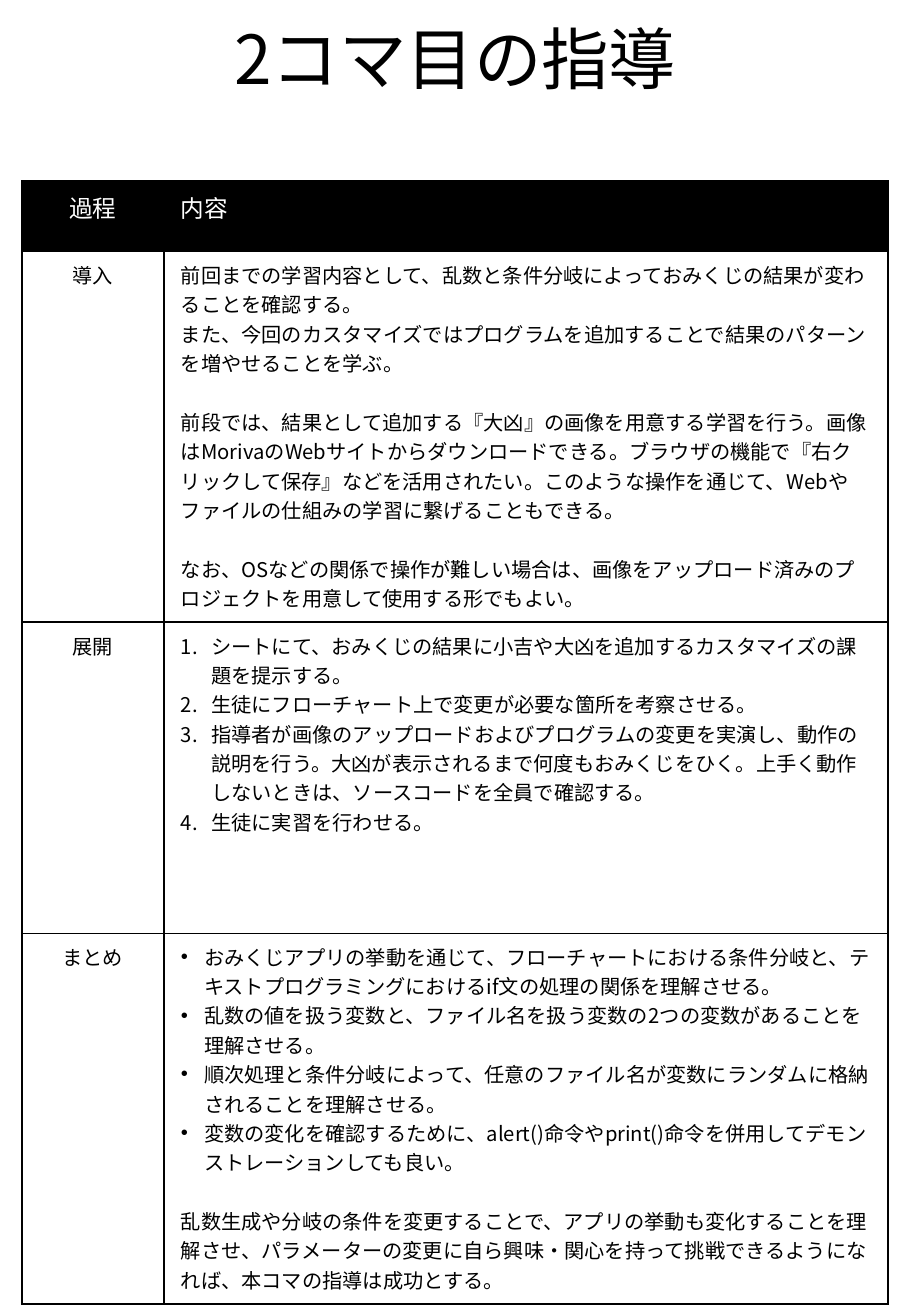
from dataclasses import dataclass
from enum import Enum

from lxml import etree
from pptx import Presentation
from pptx.dml.color import RGBColor
from pptx.enum.text import MSO_ANCHOR, MSO_AUTO_SIZE, PP_ALIGN
from pptx.oxml.ns import qn
from pptx.util import Inches, Pt

CENTER, LEFT = PP_ALIGN.CENTER, PP_ALIGN.LEFT
TOP, BOTTOM = MSO_ANCHOR.TOP, MSO_ANCHOR.BOTTOM
NO_AUTOFIT = MSO_AUTO_SIZE.NONE

BLACK = RGBColor(0x00, 0x00, 0x00)
WHITE = RGBColor(0xFF, 0xFF, 0xFF)
FONT = "Noto Sans CJK JP"
TITLE_SIZE, HEADER_SIZE, BODY_SIZE = 40, 14, 12
SECTION_GAP = Pt(17.4)
BORDER_WIDTH = Pt(1)
COLUMN_WIDTHS = (1.17, 5.96)


class Marker(Enum):
    """List marker; the value is its hanging indent in inches."""
    NONE = 0
    NUMBER = 0.25
    BULLET = 0.19


@dataclass(frozen=True)
class Line:
    text: str
    marker: Marker = Marker.NONE
    gap_before: bool = False


@dataclass(frozen=True)
class Stage:
    name: str
    content: tuple[Line, ...]
    height: float
    size: int = BODY_SIZE
    color: RGBColor = BLACK
    fill: RGBColor = WHITE


STAGES = (
    Stage("過程", (Line("内容"),), 0.58, HEADER_SIZE, WHITE, BLACK),
    Stage("導入", (
        Line("前回までの学習内容として、乱数と条件分岐によっておみくじの結果が変わることを確認する。"),
        Line("また、今回のカスタマイズではプログラムを追加することで結果のパターンを増やせることを学ぶ。"),
        Line("前段では、結果として追加する『大凶』の画像を用意する学習を行う。画像はMorivaのWebサイトから"
             "ダウンロードできる。ブラウザの機能で『右クリックして保存』などを活用されたい。"
             "このような操作を通じて、Webやファイルの仕組みの学習に繋げることもできる。", gap_before=True),
        Line("なお、OSなどの関係で操作が難しい場合は、画像をアップロード済みのプロジェクトを用意して"
             "使用する形でもよい。", gap_before=True),
    ), 3.05),
    Stage("展開", (
        Line("シートにて、おみくじの結果に小吉や大凶を追加するカスタマイズの課題を提示する。", Marker.NUMBER),
        Line("生徒にフローチャート上で変更が必要な箇所を考察させる。", Marker.NUMBER),
        Line("指導者が画像のアップロードおよびプログラムの変更を実演し、動作の説明を行う。"
             "大凶が表示されるまで何度もおみくじをひく。上手く動作しないときは、"
             "ソースコードを全員で確認する。", Marker.NUMBER),
        Line("生徒に実習を行わせる。", Marker.NUMBER),
    ), 2.56),
    Stage("まとめ", (
        Line("おみくじアプリの挙動を通じて、フローチャートにおける条件分岐と、"
             "テキストプログラミングにおけるif文の処理の関係を理解させる。", Marker.BULLET),
        Line("乱数の値を扱う変数と、ファイル名を扱う変数の2つの変数があることを理解させる。", Marker.BULLET),
        Line("順次処理と条件分岐によって、任意のファイル名が変数にランダムに格納されることを理解させる。",
             Marker.BULLET),
        Line("変数の変化を確認するために、alert()命令やprint()命令を併用して"
             "デモンストレーションしても良い。", Marker.BULLET),
        Line("乱数生成や分岐の条件を変更することで、アプリの挙動も変化することを理解させ、"
             "パラメーターの変更に自ら興味・関心を持って挑戦できるようになれば、"
             "本コマの指導は成功とする。", gap_before=True),
    ), 3.05),
)


def set_font(paragraph, size: int, color: RGBColor) -> None:
    font = paragraph.font
    font.size, font.bold, font.name = Pt(size), False, FONT
    font.color.rgb = color
    defaults = paragraph._p.get_or_add_pPr().find(qn("a:defRPr"))
    etree.SubElement(defaults, qn("a:ea"), typeface=FONT)


def set_marker(paragraph, marker: Marker) -> None:
    if marker is Marker.NONE:
        return
    properties = paragraph._p.get_or_add_pPr()
    indent = Inches(marker.value)
    properties.set("marL", str(indent))
    properties.set("indent", str(-indent))
    if marker is Marker.NUMBER:
        etree.SubElement(properties, qn("a:buAutoNum"), type="arabicPeriod")
    else:
        etree.SubElement(properties, qn("a:buFont"), typeface="Arial")
        etree.SubElement(properties, qn("a:buChar"), char="•")


def set_borders(cell) -> None:
    properties = cell._tc.get_or_add_tcPr()
    for position, side in enumerate(("lnL", "lnR", "lnT", "lnB")):
        border = etree.Element(qn(f"a:{side}"), w=str(BORDER_WIDTH))
        solid = etree.SubElement(border, qn("a:solidFill"))
        etree.SubElement(solid, qn("a:srgbClr"), val=str(BLACK))
        properties.insert(position, border)


def fill_cell(cell, lines: tuple[Line, ...], stage: Stage, alignment: PP_ALIGN) -> None:
    cell.margin_left = cell.margin_right = Inches(0.14)
    cell.margin_top = cell.margin_bottom = Inches(0.07)
    cell.vertical_anchor = TOP
    cell.fill.solid()
    cell.fill.fore_color.rgb = stage.fill
    set_borders(cell)
    frame = cell.text_frame
    for index, line in enumerate(lines):
        paragraph = frame.add_paragraph() if index else frame.paragraphs[0]
        paragraph.text = line.text
        paragraph.alignment = alignment
        if line.gap_before:
            paragraph.space_before = SECTION_GAP
        set_marker(paragraph, line.marker)
        set_font(paragraph, stage.size, stage.color)


def add_title(slide, text: str) -> None:
    title = slide.shapes.title
    title.left, title.top = Inches(0.56), Inches(0.06)
    title.width, title.height = Inches(6.38), Inches(0.81)
    frame = title.text_frame
    frame.text = text
    frame.auto_size = NO_AUTOFIT
    frame.vertical_anchor = BOTTOM
    heading = frame.paragraphs[0]
    heading.alignment = CENTER
    heading.line_spacing = 0.9
    set_font(heading, TITLE_SIZE, BLACK)


def add_lesson_table(slide, stages: tuple[Stage, ...]) -> None:
    height = sum(stage.height for stage in stages)
    lesson = slide.shapes.add_table(
        len(stages), len(COLUMN_WIDTHS), Inches(0.18), Inches(1.49),
        Inches(sum(COLUMN_WIDTHS)), Inches(height)).table
    lesson.horz_banding = False
    for column, width in zip(lesson.columns, COLUMN_WIDTHS):
        column.width = Inches(width)
    for index, stage in enumerate(stages):
        lesson.rows[index].height = Inches(stage.height)
        fill_cell(lesson.cell(index, 0), (Line(stage.name),), stage, CENTER)
        fill_cell(lesson.cell(index, 1), stage.content, stage, LEFT)


def main() -> None:
    presentation = Presentation()
    presentation.slide_width = Inches(7.5)
    presentation.slide_height = Inches(10.83)
    title_only = presentation.slide_layouts[5]
    slide = presentation.slides.add_slide(title_only)

    # Heading
    add_title(slide, "2コマ目の指導")

    # Lesson stages
    add_lesson_table(slide, STAGES)

    presentation.save("out.pptx")


if __name__ == "__main__":
    main()
